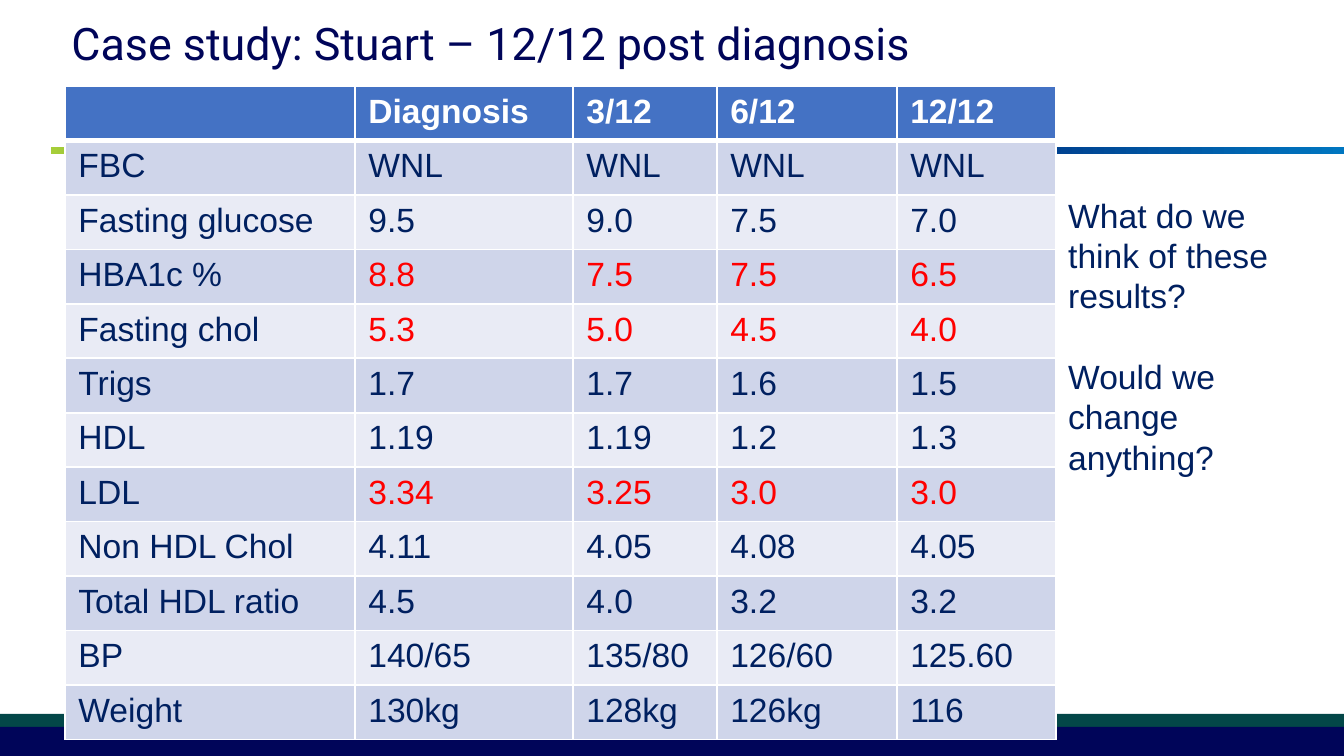
from lxml import etree
from pptx import Presentation
from pptx.dml.color import RGBColor
from pptx.enum.shapes import MSO_SHAPE
from pptx.enum.text import MSO_ANCHOR, PP_ALIGN
from pptx.oxml import parse_xml
from pptx.oxml.ns import nsdecls, qn
from pptx.util import Emu, Pt

RECT = MSO_SHAPE.RECTANGLE
MIDDLE = MSO_ANCHOR.MIDDLE
LEFT = PP_ALIGN.LEFT

NAVY = RGBColor(0x00, 0x05, 0x59)
TEAL = RGBColor(0x03, 0x47, 0x48)
LIME = RGBColor(0xA6, 0xCE, 0x39)
AZURE = RGBColor(0x00, 0x76, 0xC0)
INK = RGBColor(0x00, 0x20, 0x60)
RED = RGBColor(0xFF, 0x00, 0x00)
WHITE = RGBColor(0xFF, 0xFF, 0xFF)
HEAD = RGBColor(0x44, 0x72, 0xC4)
BANDS = RGBColor(0xCF, 0xD5, 0xEA), RGBColor(0xE9, 0xEB, 0xF5)

WIDE, HIGH = 1344, 756
STOPS = (0, LIME), (36, TEAL), (52, NAVY), (100, AZURE)
COLS = 290, 218, 144, 180, 159
ROWS = (
    ("", "Diagnosis", "3/12", "6/12", "12/12"),
    ("FBC", "WNL", "WNL", "WNL", "WNL"),
    ("Fasting glucose", "9.5", "9.0", "7.5", "7.0"),
    ("HBA1c %", "8.8", "7.5", "7.5", "6.5"),
    ("Fasting chol", "5.3", "5.0", "4.5", "4.0"),
    ("Trigs", "1.7", "1.7", "1.6", "1.5"),
    ("HDL", "1.19", "1.19", "1.2", "1.3"),
    ("LDL", "3.34", "3.25", "3.0", "3.0"),
    ("Non HDL Chol", "4.11", "4.05", "4.08", "4.05"),
    ("Total HDL ratio", "4.5", "4.0", "3.2", "3.2"),
    ("BP", "140/65", "135/80", "126/60", "125.60"),
    ("Weight", "130kg", "128kg", "126kg", "116"),
)
ALERTS = "HBA1c %", "Fasting chol", "LDL"
ASKS = "What do we think of these results?", "Would we change anything?"


def px(num):
    return Emu(round(num * 914400 / 134.4))


def write(para, text, size=18, font="Arial", color=INK, bold=False,
          line=None, before=0):
    para.alignment = LEFT
    para.space_before = Pt(before)
    if line:
        para.line_spacing = Pt(line)
    run = para.add_run()
    run.text = text
    run.font.size = Pt(size)
    run.font.name = font
    run.font.bold = bold
    run.font.color.rgb = color


def bar(slide, box, color):
    shape = slide.shapes.add_shape(RECT, *map(px, box))
    shape.shadow.inherit = False
    shape.line.fill.background()
    shape.fill.solid()
    shape.fill.fore_color.rgb = color
    return shape


def rule(slide, box):
    fill = bar(slide, box, NAVY).fill
    fill.gradient()
    fill.gradient_angle = 0
    # The public gradient has two stops; this rule needs four
    stops = "".join(
        f'<a:gs pos="{pos * 1000}"><a:srgbClr val="{color}"/></a:gs>'
        for pos, color in STOPS)
    new = parse_xml(f'<a:gsLst {nsdecls("a")}>{stops}</a:gsLst>')
    old = slide.shapes[-1]._element.spPr.find(".//" + qn("a:gsLst"))
    old.getparent().replace(old, new)


def footer(slide, box):
    left, top, wide, high = box
    strip = 13
    bar(slide, (left, top, wide, strip), TEAL)
    bar(slide, (left, top + strip, wide, high - strip), NAVY)


def title(slide, box):
    shape = slide.shapes.title
    shape.left, shape.top, shape.width, shape.height = map(px, box)
    frame = shape.text_frame
    frame.vertical_anchor = MIDDLE
    frame.word_wrap = True
    write(frame.paragraphs[0], "Case study: Stuart – 12/12 post diagnosis",
          size=24, font="Roboto", color=NAVY)


def border(cell, top, bottom):
    props = cell._tc.get_or_add_tcPr()
    for side, width in (("L", 1), ("R", 1), ("T", top), ("B", bottom)):
        line = etree.SubElement(props, qn(f"a:ln{side}"), w=str(Pt(width)))
        fill = etree.SubElement(line, qn("a:solidFill"))
        etree.SubElement(fill, qn("a:srgbClr"), val=str(WHITE))


def results(slide, box):
    table = slide.shapes.add_table(len(ROWS), len(COLS), *map(px, box)).table
    for col, wide in zip(table.columns, COLS):
        col.width = px(wide)
    for i, texts in enumerate(ROWS):
        table.rows[i].height = px(box[3] / len(ROWS))
        for j, text in enumerate(texts):
            cell = table.cell(i, j)
            # A thick line parts the header from the body
            border(cell, 3 if i == 1 else 1, 3 if i == 0 else 1)
            cell.fill.solid()
            cell.fill.fore_color.rgb = BANDS[(i - 1) % 2] if i else HEAD
            color = RED if j and texts[0] in ALERTS else INK
            if text:
                write(cell.text_frame.paragraphs[0], text,
                      color=color if i else WHITE, bold=i == 0)


def asks(slide, box):
    frame = slide.shapes.add_textbox(*map(px, box)).text_frame
    frame.word_wrap = True
    for i, text in enumerate(ASKS):
        para = frame.add_paragraph() if i else frame.paragraphs[0]
        write(para, text, line=21.6, before=21.6 if i else 0)


def main():
    deck = Presentation()
    deck.slide_width, deck.slide_height = px(WIDE), px(HIGH)
    slide = deck.slides.add_slide(deck.slide_layouts[5])
    # Master decoration, then content
    footer(slide, (0, 714, WIDE, HIGH - 714))
    rule(slide, (51, 147, WIDE - 51, 7))
    title(slide, (58, -4, 1267, 94))
    results(slide, (65, 86, sum(COLS), 654))
    asks(slide, (1055, 188, 241, 380))
    deck.save("out.pptx")


if __name__ == "__main__":
    main()
